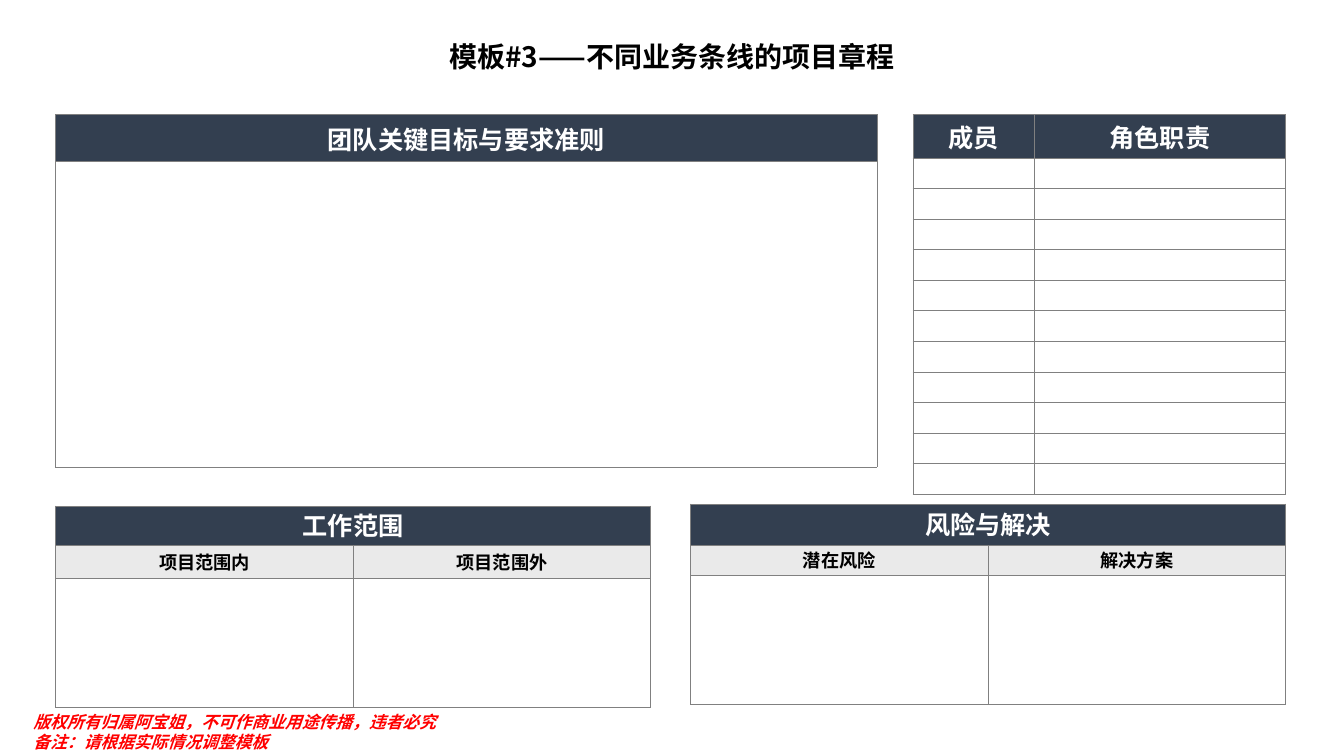
from dataclasses import dataclass

from lxml import etree
from pptx import Presentation
from pptx.dml.color import RGBColor
from pptx.enum.text import MSO_ANCHOR, PP_ALIGN
from pptx.oxml.ns import qn
from pptx.util import Cm, Pt

CENTER, LEFT = PP_ALIGN.CENTER, PP_ALIGN.LEFT
MIDDLE = MSO_ANCHOR.MIDDLE
BLANK_LAYOUT = 6
MEMBER_ROWS = 11


@dataclass(frozen=True)
class Theme:
    navy: str = "333F50"
    pale: str = "EAEAEA"
    white: str = "FFFFFF"
    black: str = "000000"
    red: str = "FF0000"
    grid: str = "808080"
    font: str = "Noto Sans CJK SC"
    note_font: str = "DejaVu Sans"
    title_size: float = 20
    header_size: float = 18
    label_size: float = 13
    note_size: float = 12
    empty_size: float = 10
    grid_width: float = 0.5


THEME = Theme()


def set_values(target, values):
    for name, value in values.items():
        setattr(target, name, value)


def write(para, text, size, color, align=CENTER, font=THEME.font, italic=False):
    para.alignment = align
    span = para.add_run()
    span.text = text
    set_values(span.font, {"size": Pt(size), "name": font, "bold": True, "italic": italic})
    span.font.color.rgb = RGBColor.from_string(color)
    east_asian = etree.SubElement(span.font._element, qn("a:ea"))
    east_asian.set("typeface", font)


def outline(cell):
    properties = cell._tc.get_or_add_tcPr()
    for index, side in enumerate(("lnL", "lnR", "lnT", "lnB")):
        line = etree.Element(qn(f"a:{side}"), w=str(Pt(THEME.grid_width)))
        fill = etree.SubElement(line, qn("a:solidFill"))
        etree.SubElement(fill, qn("a:srgbClr"), val=THEME.grid)
        properties.insert(index, line)


def style_cell(cell, fill, margin):
    cell.fill.solid()
    cell.fill.fore_color.rgb = RGBColor.from_string(fill)
    sides = ("margin_left", "margin_right", "margin_top", "margin_bottom")
    set_values(cell, {"vertical_anchor": MIDDLE, **dict.fromkeys(sides, Cm(margin))})
    outline(cell)


def add_grid(page, box, columns, rows, texts, fills, margin=0.08, spacing=None):
    left, top = box
    frame = page.shapes.add_table(
        len(rows), len(columns), Cm(left), Cm(top), Cm(sum(columns)), Cm(sum(rows))
    )
    table = frame.table
    set_values(table, {"first_row": False, "horz_banding": False})
    for column, width in zip(table.columns, columns):
        column.width = Cm(width)
    for row_index, (row, height) in enumerate(zip(table.rows, rows)):
        row.height = Cm(height)
        fill = fills[row_index] if row_index < len(fills) else THEME.white
        header = row_index == 0
        size = THEME.header_size if header else THEME.label_size
        color = THEME.white if header else THEME.black
        labels = texts[row_index] if row_index < len(texts) else ()
        for column_index, cell in enumerate(row.cells):
            style_cell(cell, fill, margin)
            para = cell.text_frame.paragraphs[0]
            if column_index < len(labels):
                if spacing:
                    para.line_spacing = spacing
                write(para, labels[column_index], size, color)
            else:
                etree.SubElement(para._p, qn("a:endParaRPr"), sz=str(THEME.empty_size * 100))
    return table


def add_goals(page, box):
    add_grid(page, box, [20.7], [1.18, 7.7], [["团队关键目标与要求准则"]], [THEME.navy], 0.13)


def add_members(page, box):
    rows = [1.09] + [0.77] * MEMBER_ROWS
    add_grid(page, box, [3.06, 6.32], rows, [["成员", "角色职责"]], [THEME.navy])


def add_split_panel(page, box, rows, heading, labels):
    fills = [THEME.navy, THEME.pale]
    table = add_grid(page, box, [7.5, 7.5], rows, [[heading], labels], fills, spacing=0.9)
    table.cell(0, 0).merge(table.cell(0, 1))


def add_text(page, box, lines, **style):
    shape = page.shapes.add_textbox(*map(Cm, box))
    frame = shape.text_frame
    sides = ("margin_left", "margin_right", "margin_top", "margin_bottom")
    set_values(frame, {"word_wrap": True, **dict.fromkeys(sides, 0)})
    for index, line in enumerate(lines):
        para = frame.add_paragraph() if index else frame.paragraphs[0]
        write(para, line, **style)


def add_title(page, box):
    add_text(
        page, box, ["模板#3——不同业务条线的项目章程"],
        size=THEME.title_size, color=THEME.black,
    )


def add_notes_line(page, box):
    add_text(
        page, box,
        ["版权所有归属阿宝姐，不可作商业用途传播，违者必究", "备注：请根据实际情况调整模板"],
        size=THEME.note_size, color=THEME.red, align=LEFT,
        font=THEME.note_font, italic=True,
    )


def main():
    deck = Presentation()
    set_values(deck, {"slide_width": Cm(33.87), "slide_height": Cm(19.05)})
    page = deck.slides.add_slide(deck.slide_layouts[BLANK_LAYOUT])
    add_split_panel(page, (1.4, 12.75), [0.99, 0.84, 3.25], "工作范围", ["项目范围内", "项目范围外"])
    add_split_panel(page, (17.4, 12.7), [1.04, 0.76, 3.25], "风险与解决", ["潜在风险", "解决方案"])
    add_goals(page, (1.4, 2.89))
    add_members(page, (23.01, 2.89))
    add_title(page, (10.13, 0.99, 13.61, 0.94))
    add_notes_line(page, (0.84, 17.93, 11.35, 1.02))
    deck.save("out.pptx")


if __name__ == "__main__":
    main()
